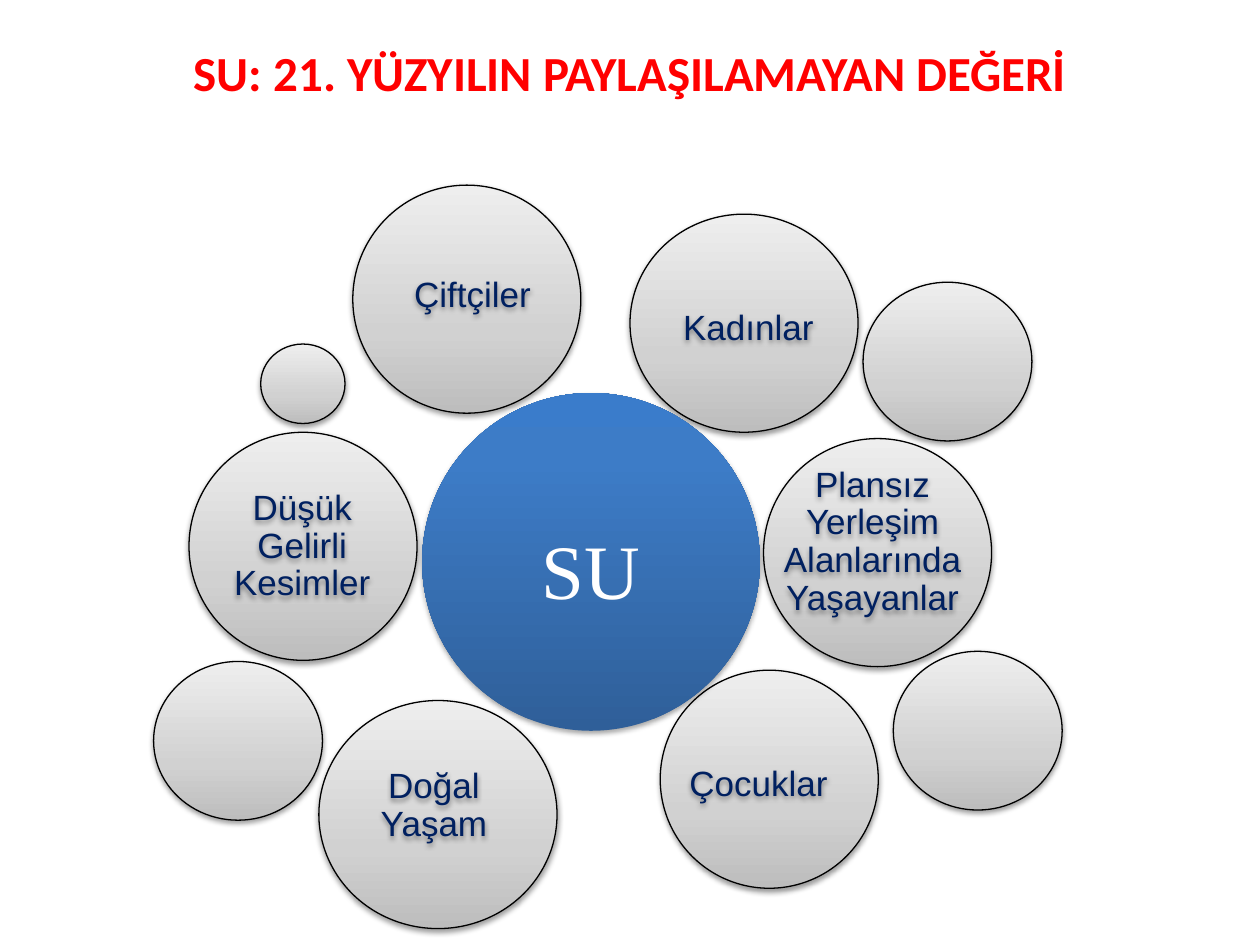
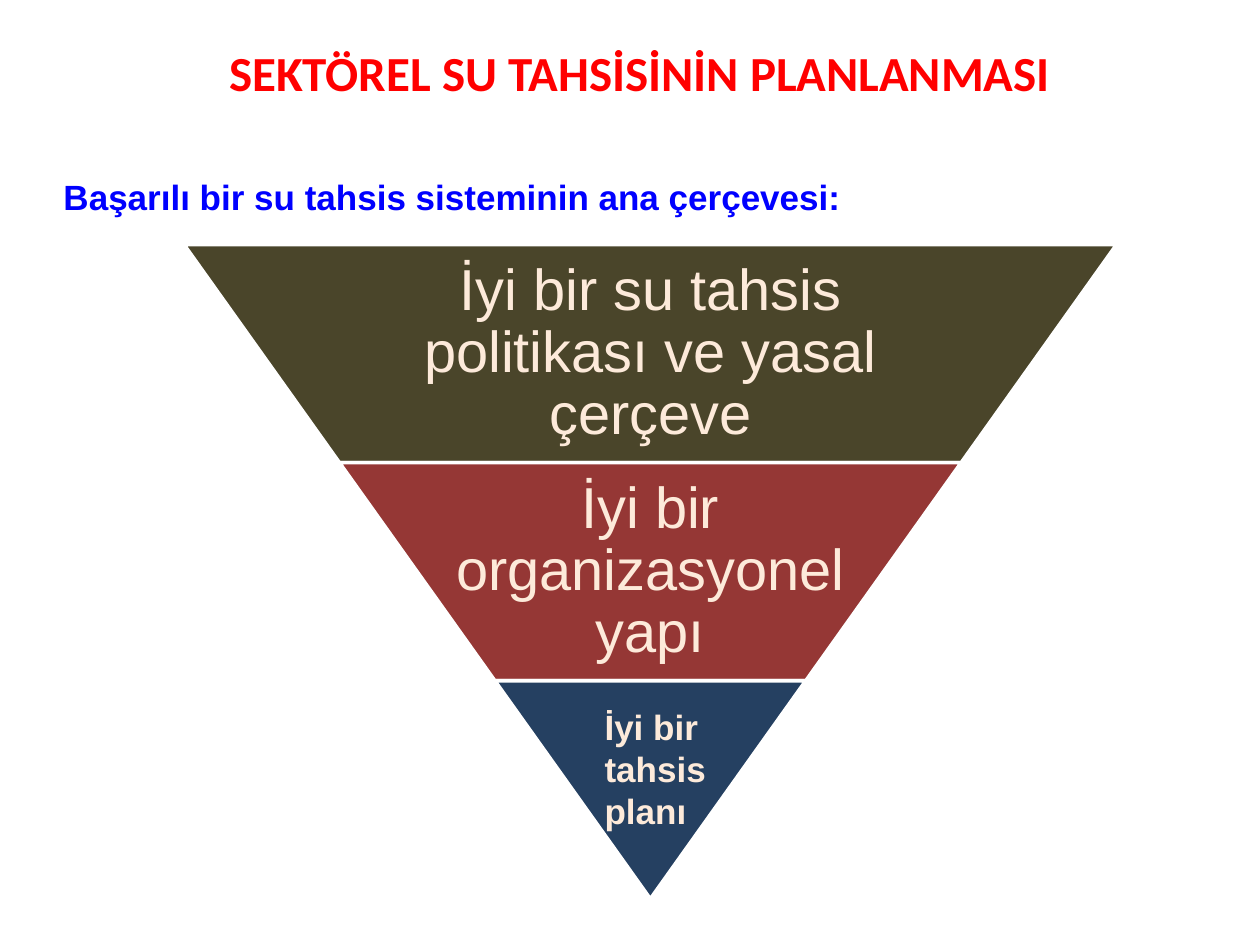
from lxml import etree
from pptx import Presentation
from pptx import util as u
from pptx.dml import color
from pptx.enum import shapes, text
from pptx.oxml import ns

Pt = u.Pt
CENTER, LEFT = text.PP_ALIGN.CENTER, text.PP_ALIGN.LEFT
MIDDLE, TOP = text.MSO_ANCHOR.MIDDLE, text.MSO_ANCHOR.TOP
rgb = color.RGBColor.from_string

TITLE = dict(size=Pt(28), name="Calibri", bold=True, color="FF0000")
LABEL = dict(size=Pt(20), name="Arial", bold=False, color="002060")
HUB = dict(size=Pt(44), name="Times New Roman", bold=False, color="FFFFFF")
LEAD = dict(size=Pt(20), name="Arial", bold=True, color="0000FF")
LEVEL = dict(size=Pt(33), name="Arial", bold=False, color="FDEADA")
LAST_LEVEL = dict(size=Pt(20), name="Arial", bold=True, color="FDEADA")

GREY = [(0, "BDBDBD"), (35, "D1D1D1"), (100, "EEEEEE")]
BLUE = [(0, "2F5F99"), (80, "3D7CC7"), (100, "3A7CCB")]


def write(shape, words, style, align=CENTER, anchor=MIDDLE,
          inset=(7.2, 3.6, 7.2, 3.6), spacing=1.0):
    frame = shape.text_frame
    sides = ("margin_left", "margin_top", "margin_right", "margin_bottom")
    settings = dict(zip(sides, map(Pt, inset)), word_wrap=True, vertical_anchor=anchor)
    for key, value in settings.items():
        setattr(frame, key, value)
    line = frame.paragraphs[0]
    line.alignment, line.line_spacing = align, spacing
    run = line.add_run()
    run.text = words
    for key, value in style.items():
        if key == "color":
            run.font.color.rgb = rgb(value)
        else:
            setattr(run.font, key, value)


def shade(shape, stops=None, strength=38):
    """Give a soft drop shadow and, if stops are named, an upward gradient."""
    props = shape.element.spPr
    if stops:
        shape.fill.gradient()
        shape.fill.gradient_angle = 90
        ramp = props.find(".//" + ns.qn("a:gsLst"))
        for old in list(ramp):
            ramp.remove(old)
        for place, tone in stops:
            stop = etree.SubElement(ramp, ns.qn("a:gs"), pos=str(place * 1000))
            etree.SubElement(stop, ns.qn("a:srgbClr"), val=tone)
    shape.shadow.inherit = False
    cast = etree.SubElement(props.find(ns.qn("a:effectLst")), ns.qn("a:outerShdw"),
                            blurRad=str(Pt(3.1)), dist=str(Pt(1.6)),
                            dir="5400000", rotWithShape="0")
    black = etree.SubElement(cast, ns.qn("a:srgbClr"), val="000000")
    etree.SubElement(black, ns.qn("a:alpha"), val=str(strength * 1000))


deck = Presentation()
deck.slide_width, deck.slide_height = Pt(720), Pt(540)

# Both slides with their titles
pages = []
for heading, left, width in (("SU: 21. YÜZYILIN PAYLAŞILAMAYAN DEĞERİ", 36, 648),
                             ("SEKTÖREL SU TAHSİSİNİN PLANLANMASI", 76.3, 578.2)):
    page = deck.slides.add_slide(deck.slide_layouts[6]).shapes
    write(page.add_textbox(Pt(left), Pt(20.9), Pt(width), Pt(41)), heading, TITLE)
    pages.append(page)
water, funnel = pages

# Slide 1: water users around the hub, each with its circle and label box
users = [
    ("Çiftçiler", (201.6, 105.8, 130.3, 130.3), (223.9, 123.1, 92.2, 92.2)),
    ("Düşük Gelirli Kesimler", (108, 247, 130.3, 130.3), (127.4, 264.2, 90.7, 96.5)),
    ("Plansız Yerleşim Alanlarında Yaşayanlar",
     (436.3, 250.6, 130.3, 130.3), (439.2, 247.7, 118.8, 124.6)),
    ("Kadınlar", (360, 122.4, 130.3, 124.6), (382.3, 139.7, 90.7, 96.5)),
    ("Çocuklar", (377.3, 383, 124.6, 124.6), (388.1, 400.3, 90.7, 96.5)),
    ("Doğal Yaşam", (182.2, 400.3, 136.1, 130.3), (199.4, 411.8, 97.2, 97.9)),
]
satellites = [(510.5, 372.2, 96.5, 90.7), (493.2, 161.3, 96.5, 90.7),
              (149, 196.6, 48.2, 45.4), (87.8, 378, 96.5, 90.7)]

for spot in [circle for _, circle, _ in users] + satellites:
    bubble = water.add_shape(shapes.MSO_SHAPE.OVAL, *map(Pt, spot))
    bubble.line.color.rgb = rgb("000000")
    bubble.line.width = Pt(0.75)
    shade(bubble, GREY)

hub = water.add_shape(shapes.MSO_SHAPE.OVAL, Pt(241.2), Pt(224.6), Pt(193), Pt(193))
hub.line.fill.background()
shade(hub, BLUE, 35)
write(hub, "SU", HUB, inset=(7.2, 11, 7.2, 3.6))

for user, _, spot in users:
    label = water.add_textbox(*map(Pt, spot))
    label.fill.background()
    shade(label)
    write(label, user, LABEL, inset=[1.6] * 4, spacing=0.9)

# Slide 2: lead line
write(funnel.add_textbox(Pt(29.2), Pt(96.6), Pt(660), Pt(30)),
      "Başarılı bir su tahsis sisteminin ana çerçevesi:", LEAD, LEFT, TOP)

# Inverted pyramid: every level is narrower by the same step on both sides
pyramid_left, pyramid_top, pyramid_width, level_height = 105.2, 139.8, 532.8, 124.6
step = pyramid_width / 6
levels = [("İyi bir su tahsis politikası ve yasal çerçeve", "4A452A"),
          ("İyi bir organizasyonel yapı", "953735"),
          ("İyi bir tahsis planı", "254061")]
for rank, (words, tone) in enumerate(levels):
    left, top = pyramid_left + rank * step, pyramid_top + rank * level_height
    width = pyramid_width - 2 * rank * step
    band = funnel.add_shape(shapes.MSO_SHAPE.TRAPEZOID,
                            Pt(left), Pt(top), Pt(width), Pt(level_height))
    band.rotation = 180
    band.adjustments[0] = step / level_height
    band.shadow.inherit = False
    band.fill.solid()
    band.fill.fore_color.rgb = rgb(tone)
    band.line.color.rgb = rgb("FFFFFF")
    band.line.width = Pt(2)
    if rank < 2:
        caption = funnel.add_textbox(Pt(left + width * 0.175), Pt(top),
                                     Pt(width * 0.65), Pt(level_height))
        write(caption, words, LEVEL, inset=[3.6] * 4, spacing=0.9)
    else:
        caption = funnel.add_textbox(Pt(338.4), Pt(399.6), Pt(113), Pt(80))
        write(caption, words, LAST_LEVEL, LEFT, TOP)

deck.save("out.pptx")
